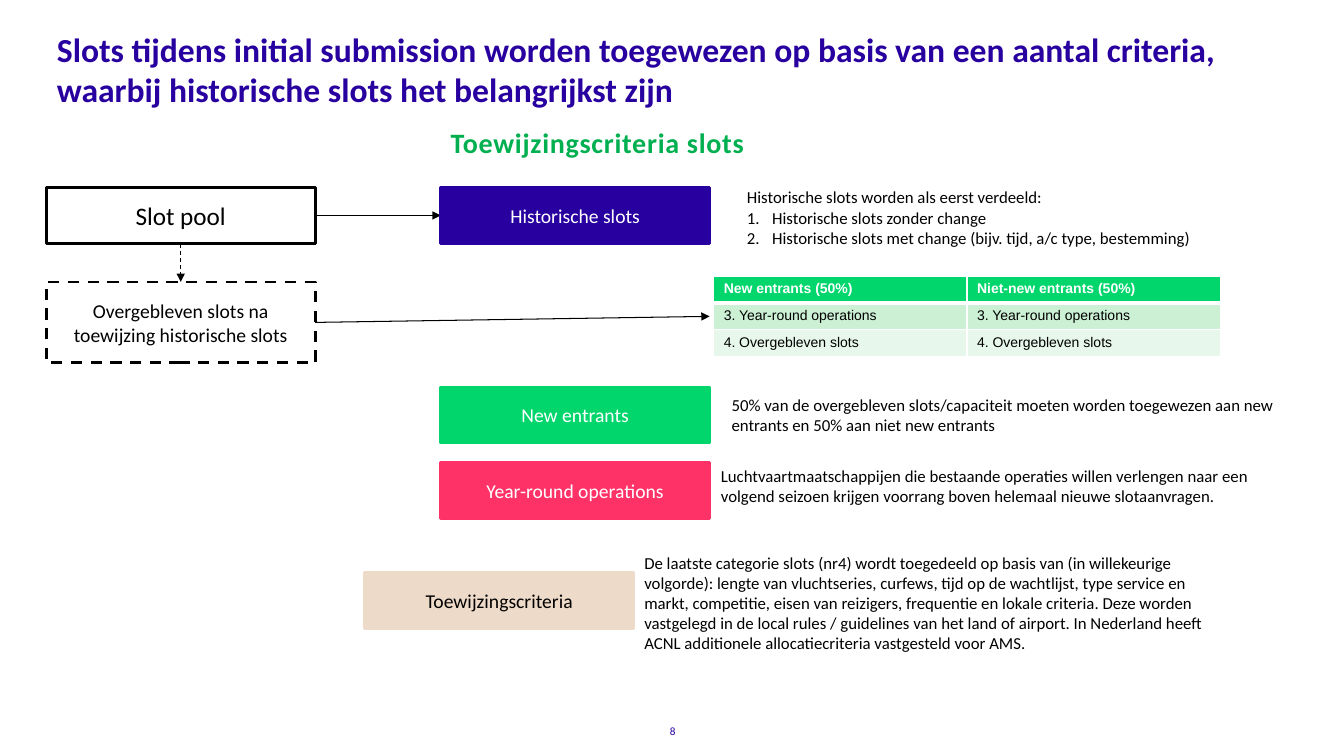
from collections import namedtuple
from dataclasses import dataclass

from lxml.etree import SubElement
from pptx import Presentation
from pptx.dml.color import RGBColor
from pptx.enum.dml import MSO_LINE
from pptx.enum.shapes import MSO_CONNECTOR, MSO_SHAPE
from pptx.enum.text import MSO_ANCHOR, PP_ALIGN
from pptx.oxml.ns import qn
from pptx.util import Inches, Pt

SLIDE_W, SLIDE_H = Inches(13.33), Inches(7.5)
COL, ROW = SLIDE_W / 100, SLIDE_H / 100  # grid of 100 columns by 100 rows
BOX_W, BOX_H = 20, 7.4
NOTE_W = 43.5

Box = namedtuple("Box", "x y w h")


@dataclass(frozen=True)
class Theme:
    font: str = "Calibri"
    table_font: str = "Arial"
    navy: str = "2800A0"
    heading_green: str = "00B050"
    green: str = "00D66C"
    pink: str = "FF3268"
    sand: str = "EEDAC8"
    black: str = "000000"
    white: str = "FFFFFF"
    bands: tuple = ("CCF0D4", "E7F7EB")
    title: int = 24
    heading: int = 20
    pool: int = 18
    label: int = 14
    note: int = 12
    cell: int = 10
    page: int = 8


T = Theme()


def apply(obj, values):
    for name, value in values.items():
        setattr(obj, name, value)


def emu(box):
    return [round(n * unit) for n, unit in zip(box, (COL, ROW, COL, ROW))]


def write(tf, lines, size, color, bold=False, font=T.font, align=PP_ALIGN.LEFT):
    """Fill a text frame; a line that starts with "#" becomes a numbered item."""
    tf.word_wrap = True
    for i, line in enumerate(lines):
        p = tf.paragraphs[0] if i == 0 else tf.add_paragraph()
        p.alignment = align
        if line.startswith("#"):
            pPr = p._p.get_or_add_pPr()
            pPr.set("marL", str(Inches(0.25)))
            pPr.set("indent", str(-Inches(0.25)))
            SubElement(pPr, qn("a:buFont"), typeface="+mj-lt")
            SubElement(pPr, qn("a:buAutoNum"), type="arabicPeriod")
        r = p.add_run()
        r.text = line.lstrip("#")
        apply(r.font, {"name": font, "size": Pt(size), "bold": bold})
        r.font.color.rgb = RGBColor.from_string(color)


def text(s, box, lines, size, color, anchor=MSO_ANCHOR.TOP, **style):
    tf = s.shapes.add_textbox(*emu(box)).text_frame
    tf.vertical_anchor = anchor
    write(tf, lines, size, color, **style)
    return tf


def label_box(s, box, label, fill=None, color=T.black, size=T.label, dashed=False):
    sp = s.shapes.add_shape(MSO_SHAPE.RECTANGLE, *emu(box))
    sp.shadow.inherit = False
    if fill:
        sp.fill.solid()
        sp.fill.fore_color.rgb = RGBColor.from_string(fill)
    else:
        sp.fill.background()
    sp.line.width = Pt(2)
    sp.line.color.rgb = RGBColor.from_string(fill or T.black)
    if dashed:
        sp.line.dash_style = MSO_LINE.DASH
    sp.text_frame.vertical_anchor = MSO_ANCHOR.MIDDLE
    write(sp.text_frame, [label], size, color, align=PP_ALIGN.CENTER)


def arrow(s, start, end, dashed=False):
    ends = emu((*start, *end))
    cx = s.shapes.add_connector(MSO_CONNECTOR.STRAIGHT, *ends)
    cx.line.width = Pt(0.75)
    cx.line.color.rgb = RGBColor.from_string(T.black)
    if dashed:
        cx.line.dash_style = MSO_LINE.DASH
    SubElement(cx.line._get_or_add_ln(), qn("a:tailEnd"), type="triangle")
    SubElement(cx._element.spPr, qn("a:effectLst"))


def header(s, box):
    text(s, box._replace(h=12.3),
         ["Slots tijdens initial submission worden toegewezen op basis van een "
          "aantal criteria, waarbij historische slots het belangrijkst zijn"],
         T.title, T.navy, bold=True)
    tf = text(s, Box(box.x + 29.3, box.y + 13.7, 29.6, 3.3),
              ["Toewijzingscriteria slots"], T.heading, T.heading_green,
              anchor=MSO_ANCHOR.MIDDLE, bold=True)
    p = tf.paragraphs[0]
    p.line_spacing = Pt(28.5)
    p.runs[0].font._element.set("spc", "50")


def slot_flow(s, box, criteria_x, table_x):
    """Slot pool above the remaining slots, with arrows to what each leads to."""
    pool = box._replace(h=BOX_H)
    rest = box._replace(y=box.y + 12.5, h=box.h - 12.5)
    label_box(s, pool, "Slot pool", size=T.pool)
    label_box(s, rest, "Overgebleven slots na toewijzing historische slots", dashed=True)
    right, middle = box.x + box.w, box.x + box.w / 2
    pool_y, rest_y = pool.y + pool.h / 2, rest.y + rest.h / 2
    arrow(s, (right, pool_y), (criteria_x, pool_y))
    arrow(s, (middle, pool.y + pool.h), (middle, rest.y), dashed=True)
    arrow(s, (right, rest_y), (table_x, rest_y - 0.8))


def criterion(s, box, label, fill, color, note, dx, dy, note_h):
    """Coloured label with its note, set off from the label's top right corner."""
    label_box(s, box, label, fill, color)
    text(s, Box(box.x + box.w + dx, box.y + dy, NOTE_W, note_h), note, T.note, T.black)


def cell_borders(cell, bottom):
    tcPr = cell._tc.get_or_add_tcPr()
    for side, width in zip("LRTB", (1, 1, 1, bottom)):
        ln = SubElement(tcPr, qn(f"a:ln{side}"), w=str(Pt(width)))
        SubElement(SubElement(ln, qn("a:solidFill")), qn("a:srgbClr"), val=T.white)


def entrants_table(s, box):
    rows = [("New entrants (50%)", "Niet-new entrants (50%)"),
            ("3. Year-round operations",) * 2,
            ("4. Overgebleven slots",) * 2]
    table = s.shapes.add_table(len(rows), 2, *emu(box)).table
    for i, (row, fill) in enumerate(zip(rows, (T.green, *T.bands))):
        head = i == 0
        for j, value in enumerate(row):
            cell = table.cell(i, j)
            cell_borders(cell, 3 if head else 1)
            cell.fill.solid()
            cell.fill.fore_color.rgb = RGBColor.from_string(fill)
            write(cell.text_frame, [value], T.cell, T.white if head else T.black,
                  bold=head, font=T.table_font)


def main():
    prs = Presentation()
    apply(prs, {"slide_width": SLIDE_W, "slide_height": SLIDE_H})
    s = prs.slides.add_slide(prs.slide_layouts[6])
    left, top = 32.8, 24.8

    header(s, Box(3.5, 3.1, 92.9, 17))
    slot_flow(s, Box(3.45, top, BOX_W, 23.2), left, left + BOX_W)
    criteria = [
        (left, top, "Historische slots", T.navy, T.white,
         ["Historische slots worden als eerst verdeeld:",
          "#Historische slots zonder change",
          "#Historische slots met change (bijv. tijd, a/c type, bestemming)"],
         2.04, -0.7, 9.5),
        (left, 51.2, "New entrants", T.green, T.white,
         ["50% van de overgebleven slots/capaciteit moeten worden toegewezen aan "
          "new entrants en 50% aan niet new entrants"], 0.9, 0.4, 6.7),
        (left, 61.2, "Year-round operations", T.pink, T.white,
         ["Luchtvaartmaatschappijen die bestaande operaties willen verlengen naar "
          "een volgend seizoen krijgen voorrang boven helemaal nieuwe "
          "slotaanvragen."], 0.1, -0.3, 9.5),
        (27.15, 75.7, "Toewijzingscriteria", T.sand, T.black,
         ["De laatste categorie slots (nr4) wordt toegedeeld op basis van (in "
          "willekeurige volgorde): lengte van vluchtseries, curfews, tijd op de "
          "wachtlijst, type service en markt, competitie, eisen van reizigers, "
          "frequentie en lokale criteria. Deze worden vastgelegd in de local rules "
          "/ guidelines van het land of airport. In Nederland heeft ACNL "
          "additionele allocatiecriteria vastgesteld voor AMS."], 0.05, -3.3, 17.5),
    ]
    for x, y, *parts in criteria:
        criterion(s, Box(x, y, BOX_W, BOX_H), *parts)
    entrants_table(s, Box(53.1, 36.5, 37.7, 10.7))
    text(s, Box(42.9, 94.7, 14.3, 4), ["8"], T.page, T.navy,
         anchor=MSO_ANCHOR.MIDDLE, align=PP_ALIGN.CENTER)
    prs.save("out.pptx")


if __name__ == "__main__":
    main()
